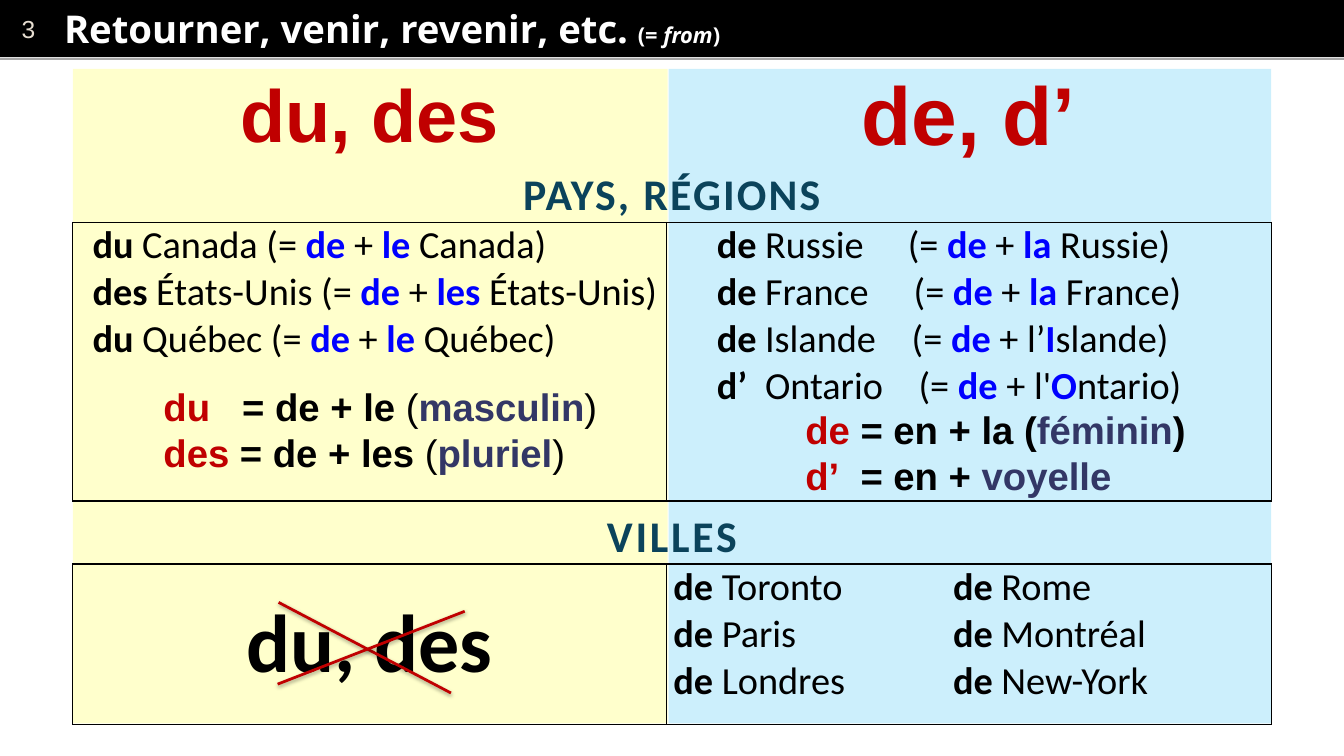
import pptx
import pptx.dml.color
import pptx.enum.shapes
import pptx.enum.text
import pptx.oxml
import pptx.oxml.ns
import pptx.util
from lxml import etree

Inches = pptx.util.Inches
Pt = pptx.util.Pt
ALIGN = pptx.enum.text.PP_ALIGN
ANCHOR = pptx.enum.text.MSO_ANCHOR

BLACK, WHITE, RED, BLUE = "000000", "FFFFFF", "C00000", "0000FF"
TEAL, NAVY, GRAY, BEIGE = "0B435B", "333766", "A6A6A6", "E7DED1"
NAMESPACE = pptx.oxml.ns.nsdecls("a")

PLAIN = {}
BOLD = {"bold": True}
BLUE_BOLD = {"bold": True, "color": BLUE}
RED_BOLD = {"bold": True, "color": RED}
NAVY_BOLD = {"bold": True, "color": NAVY}


def rgb(value):
    return pptx.dml.color.RGBColor.from_string(value)


def add_xml(parent, tag, **attributes):
    return etree.SubElement(parent, pptx.oxml.ns.qn(tag), attributes)


class GrammarSlide:
    """Holds the slide and the text style shared by its elements."""

    base = {"size": 28, "font": "Calibri", "color": BLACK, "bold": False}

    def __init__(self, presentation):
        self.slide = presentation.slides.add_slide(presentation.slide_layouts[6])
        self.shapes = self.slide.shapes

    def add_lines(self, frame, lines, align=ALIGN.LEFT, tabs=(), **style):
        """Add lines of (text, style) runs; tabs has one list of stops per line."""
        for index, runs in enumerate(lines):
            paragraph = frame.paragraphs[0] if index == 0 else frame.add_paragraph()
            paragraph.alignment = align
            if tabs:
                stops = add_xml(paragraph._p.get_or_add_pPr(), "a:tabLst")
                for stop in tabs[index]:
                    add_xml(stops, "a:tab", pos=str(Inches(stop)), algn="l")
            for text, extra in runs:
                look = {**self.base, **style, **extra}
                run = paragraph.add_run()
                run.text = text
                run.font.size = Pt(look["size"])
                run.font.name = look["font"]
                run.font.bold = look["bold"]
                run.font.italic = look.get("italic", False)
                run.font.color.rgb = rgb(look["color"])
                if "spacing" in look:
                    run._r.get_or_add_rPr().set("spc", str(look["spacing"]))

    def set_frame(self, frame, margins, anchor):
        frame.word_wrap = True
        frame.vertical_anchor = anchor
        (frame.margin_left, frame.margin_top,
         frame.margin_right, frame.margin_bottom) = map(Inches, margins)

    def rectangle(self, left, top, width, height, color, opacity=100):
        shape = self.shapes.add_shape(
            pptx.enum.shapes.MSO_SHAPE.RECTANGLE,
            *map(Inches, (left, top, width, height)))
        shape.shadow.inherit = False
        shape.line.fill.background()
        shape.fill.solid()
        shape.fill.fore_color.rgb = rgb(color)
        if opacity < 100:
            color_element = shape._element.spPr.find(".//" + pptx.oxml.ns.qn("a:srgbClr"))
            add_xml(color_element, "a:alpha", val=str(opacity * 1000))
        return shape

    def text_box(self, left, top, width, height, lines,
                 margins=(0.1, 0.05, 0.1, 0.05), anchor=ANCHOR.TOP, **style):
        box = self.shapes.add_textbox(*map(Inches, (left, top, width, height)))
        self.set_frame(box.text_frame, margins, anchor)
        self.add_lines(box.text_frame, lines, **style)

    def line(self, start, end, color, shadow=False):
        connector = self.shapes.add_connector(
            pptx.enum.shapes.MSO_CONNECTOR.STRAIGHT, *map(Inches, start + end))
        connector.line.color.rgb = rgb(color)
        connector.line.width = Pt(2)
        effects = add_xml(connector._element.spPr, "a:effectLst")
        if shadow:
            outer = add_xml(effects, "a:outerShdw", blurRad=str(Pt(3.1)),
                            dist=str(Pt(1.6)), dir="5400000", rotWithShape="0")
            add_xml(add_xml(outer, "a:srgbClr", val=BLACK), "a:alpha", val="38000")

    def table(self, left, top, widths, heights, borders):
        """Add an unfilled table; borders names the drawn sides of each row."""
        frame = self.shapes.add_table(
            len(heights), len(widths),
            *map(Inches, (left, top, sum(widths), sum(heights))))
        table = frame.table
        table.first_row = table.horz_banding = False
        for column, width in zip(table.columns, widths):
            column.width = Inches(width)
        for row, height, sides in zip(table.rows, heights, borders):
            row.height = Inches(height)
            for cell in row.cells:
                for side in "LRTB":
                    fill = (f'<a:solidFill><a:srgbClr val="{BLACK}"/></a:solidFill>'
                            if side in sides else "<a:noFill/>")
                    cell._tc.get_or_add_tcPr().append(pptx.oxml.parse_xml(
                        f'<a:ln{side} {NAMESPACE} w="{Pt(1)}">{fill}</a:ln{side}>'))
                cell.fill.background()
        return table

    def cell(self, cell, lines, anchor=ANCHOR.TOP, left=0.07, **style):
        cell.vertical_anchor = anchor
        cell.margin_left, cell.margin_right = Inches(left), Inches(0.07)
        cell.margin_top = cell.margin_bottom = 0
        self.add_lines(cell.text_frame, lines, **style)


def origin(preposition, place, article, rest, gap=" ", elided=""):
    """Runs for one place and the contraction it comes from."""
    return [(preposition, BOLD), (f"{gap}{place}{gap}(= ", PLAIN), ("de", BLUE_BOLD),
            (f" + {elided}", PLAIN), (article, BLUE_BOLD), (f"{rest})", PLAIN)]


def main():
    presentation = pptx.Presentation()
    presentation.slide_width = Inches(13.65)
    presentation.slide_height = Inches(7.68)
    page = GrammarSlide(presentation)

    header = page.rectangle(0, 0, 13.65, 0.58, BLACK)
    page.set_frame(header.text_frame, (0.22, 0.05, 0.1, 0.05), ANCHOR.MIDDLE)
    page.add_lines(header.text_frame, [[("3", PLAIN)]], size=18, font="Arial", color=BEIGE)
    page.line((0, 0.6), (13.65, 0.6), GRAY)
    page.text_box(
        0.61, 0.01, 12.85, 0.56,
        [[("Retourner, venir, revenir, etc. ", PLAIN), ("(= ", {"size": 16}),
          ("from", {"size": 16, "italic": True}), (")", {"size": 16})]],
        margins=(0.04,) * 4, anchor=ANCHOR.MIDDLE,
        font="Open Sans", color=WHITE, bold=True)

    page.rectangle(0.74, 0.7, 6.04, 6.65, "FFFF00", 20)
    page.rectangle(6.79, 0.7, 6.12, 6.65, "00B0F0", 20)

    table = page.table(0.74, 0.69, (6.03, 6.14), (0.92, 0.57, 2.83, 0.64, 1.63),
                       ("", "B", "LRTB", "TB", "LRTB"))
    for column, (text, size) in enumerate((("du, des", 54), ("de, d’", 60))):
        page.cell(table.cell(0, column), [[(text, RED_BOLD)]], ANCHOR.MIDDLE,
                  align=ALIGN.CENTER, size=size, font="Arial")
    for row, text, spacing in ((1, "PAYS, RÉGIONS", 160), (3, "VILLES", 200)):
        table.cell(row, 0).merge(table.cell(row, 1))
        page.cell(table.cell(row, 0), [[(text, BOLD)]], ANCHOR.BOTTOM,
                  align=ALIGN.CENTER, size=32, color=TEAL, spacing=spacing)

    page.cell(table.cell(2, 0), [
        origin("du", "Canada", "le", " Canada"),
        origin("des", "États-Unis", "les", " États-Unis"),
        origin("du", "Québec", "le", " Québec"),
    ], left=0.2)
    page.cell(table.cell(2, 1), [
        origin("de", "Russie", "la", " Russie", "\t"),
        origin("de", "France", "la", " France", "\t"),
        origin("de", "Islande", "I", "slande", "\t", "l’"),
        origin("d’", "Ontario", "O", "ntario", "\t", "l'"),
    ], left=0.51, tabs=[(0.49, stop) for stop in (1.94, 2, 1.98, 2.05)])

    page.cell(table.cell(4, 0), [[("du, des", BOLD)]], ANCHOR.MIDDLE,
              align=ALIGN.CENTER, size=60)
    cities = (("Toronto", "Rome"), ("Paris", "Montréal"), ("Londres", "New-York"))
    page.cell(table.cell(4, 1), [
        [("de", BOLD), (f" {first}\t", PLAIN), ("de", BOLD), (f" {second}", PLAIN)]
        for first, second in cities
    ], tabs=[(2.84,)] * len(cities))

    page.text_box(0.74, 3.84, 6.08, 1.04, [
        [("du\t", RED_BOLD), ("= de + le ", BOLD), ("(", PLAIN),
         ("masculin", NAVY_BOLD), (")", PLAIN)],
        [("des", RED_BOLD), (" = de + les", BOLD), (" (", PLAIN),
         ("pluriel", NAVY_BOLD), (")", PLAIN)],
    ], margins=(0.92, 0.05, 0.1, 0.05), tabs=[(0.8,)] * 2, font="Arial")
    page.text_box(6.83, 4.08, 6.08, 1.04, [
        [("de", RED_BOLD), ("\t= en + la (", BOLD), ("féminin", NAVY_BOLD), (")", BOLD)],
        [("d’", RED_BOLD), ("\t= en + ", BOLD), ("voyelle", NAVY_BOLD)],
    ], margins=(1.35, 0.05, 0.1, 0.05), tabs=[(0.56,)] * 2, font="Arial")

    page.line((2.83, 6.12), (4.58, 7.04), RED, shadow=True)
    page.line((4.72, 6.21), (2.82, 6.95), RED, shadow=True)

    presentation.save("out.pptx")


if __name__ == "__main__":
    main()
